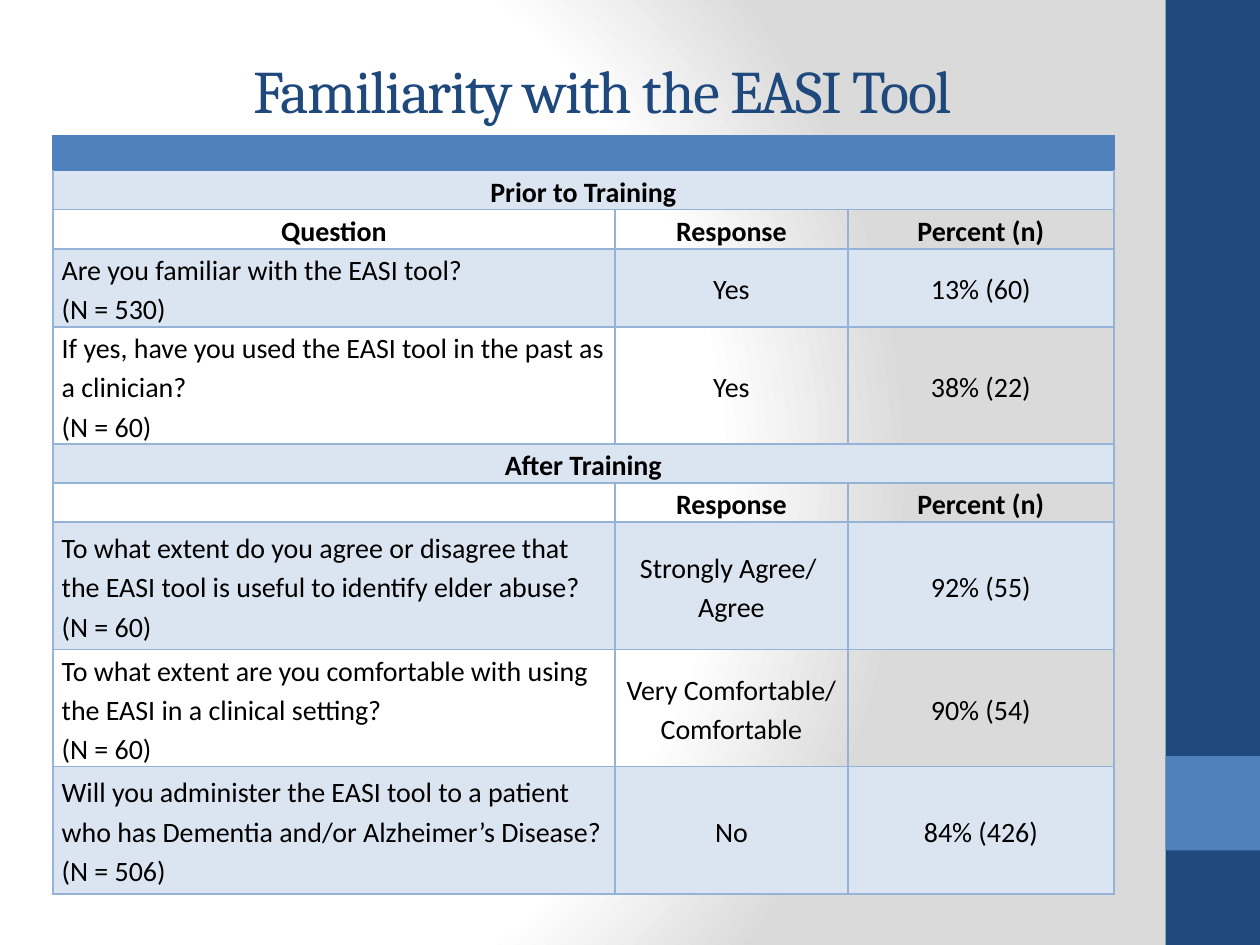
"""Build a slide with a table on familiarity with the EASI tool."""
from pptx import Presentation
from pptx.dml.color import RGBColor
from pptx.enum.shapes import MSO_SHAPE as Shape
from pptx.enum.text import MSO_ANCHOR as Anchor, PP_ALIGN as Align
from pptx.oxml import parse_xml
from pptx.oxml.ns import nsdecls, qn
from pptx.util import Inches, Pt

NAVY = RGBColor(0x1F, 0x49, 0x7D)
BLUE = RGBColor(0x4F, 0x81, 0xBD)
PALE = RGBColor(0xDB, 0xE5, 0xF1)
EDGE = RGBColor(0x95, 0xB3, 0xD7)
BLACK = RGBColor(0, 0, 0)
WHITE = RGBColor(0xFF, 0xFF, 0xFF)
GREY = RGBColor(0xDA, 0xDA, 0xDA)


def grid(*cells):
    """Convert counts of grid cells, 40 across and 30 down, to lengths."""
    return [int(presentation.slide_width * cell / 40) for cell in cells]


def write(frame, text, size=16, font="Calibri", color=BLACK, bold=False,
          align=Align.CENTER, line_spacing=1.15, tracking=0):
    """Write each line of text as a paragraph in the given format."""
    frame.word_wrap = True
    frame.vertical_anchor = Anchor.MIDDLE
    for index, line in enumerate(text.split("\n")):
        paragraph = frame.add_paragraph() if index else frame.paragraphs[0]
        paragraph.alignment = align
        paragraph.line_spacing = line_spacing
        run = paragraph.add_run()
        run.text = line
        run.font.size = Pt(size)
        run.font.name = font
        run.font.bold = bold
        run.font.color.rgb = color
        if tracking:
            run.font._element.set("spc", str(int(tracking * 100)))


presentation = Presentation()
presentation.slide_width, presentation.slide_height = Inches(10), Inches(7.5)
slide = presentation.slides.add_slide(presentation.slide_layouts[6])

slide.background.fill.gradient()
gradient = next(slide.element.iter(qn("a:gradFill")))
stops = "".join(
    f'<a:gs pos="{share * 1000}"><a:srgbClr val="{color}"/></a:gs>'
    for share, color in ((0, WHITE), (75, WHITE), (100, GREY)))
gradient.getparent().replace(gradient, parse_xml(
    f'<a:gradFill {nsdecls("a")} rotWithShape="1"><a:gsLst>{stops}</a:gsLst>'
    '<a:path path="circle"><a:fillToRect l="20000" t="50000" r="100000" b="50000"/>'
    '</a:path></a:gradFill>'))

for top, height, color in ((0, 30, NAVY), (24, 3, BLUE)):
    band = slide.shapes.add_shape(Shape.RECTANGLE, *grid(37, top, 3, height))
    band.shadow.inherit = False
    band.fill.solid()
    band.fill.fore_color.rgb = color
    band.line.fill.background()

title = slide.shapes.add_textbox(*grid(2.48, 0.32, 33.32, 5))
write(title.text_frame, "Familiarity with the EASI Tool", size=34.5,
      font="Cambria", color=NAVY, line_spacing=1, tracking=-0.8)

COLUMNS = (17.84, 7.4, 8.44)
LINE, TALL = 1.24, 4.04
ROWS = [
    (1.1, "header", [""]),
    (LINE, "heading", ["Prior to Training"]),
    (LINE, "heading", ["Question", "Response", "Percent (n)"]),
    (2 * LINE, "body", ["Are you familiar with the EASI tool?\n(N = 530)",
                        "Yes", "13% (60)"]),
    (3 * LINE, "body", ["If yes, have you used the EASI tool in the past as a clinician?"
                        "\n(N = 60)", "Yes", "38% (22)"]),
    (LINE, "heading", ["After Training"]),
    (LINE, "heading", ["", "Response", "Percent (n)"]),
    (TALL, "body", ["To what extent do you agree or disagree that the EASI tool is "
                    "useful to identify elder abuse?\n(N = 60)",
                    "Strongly Agree/ \nAgree", "92% (55)"]),
    (3 * LINE, "body", ["To what extent are you comfortable with using the EASI in a "
                        "clinical setting?\n(N = 60)",
                        "Very Comfortable/\nComfortable", "90% (54)"]),
    (TALL, "body", ["Will you administer the EASI tool to a patient who has Dementia "
                    "and/or Alzheimer’s Disease?\n(N = 506)", "No", "84% (426)"]),
]

table_height = sum(height for height, _, _ in ROWS)
table = slide.shapes.add_table(
    len(ROWS), len(COLUMNS), *grid(1.68, 4.32, sum(COLUMNS), table_height)).table
table.first_row = table.horz_banding = False
for column, width in zip(table.columns, grid(*COLUMNS)):
    column.width = width

for row_index, (height, kind, texts) in enumerate(ROWS):
    row = table.rows[row_index]
    row.height = grid(height)[0]
    for column_index, cell in enumerate(row.cells):
        cell.margin_left = cell.margin_right = Inches(0.07)
        cell.margin_top = cell.margin_bottom = 0
        cell.vertical_anchor = Anchor.MIDDLE
        if kind == "header" or row_index % 2:
            cell.fill.solid()
            cell.fill.fore_color.rgb = BLUE if kind == "header" else PALE
        else:
            cell.fill.background()
        properties = cell._tc.get_or_add_tcPr()
        for position, side in enumerate("LRTB"):
            below_header = row_index == 1 and side == "T"
            color = BLUE if kind == "header" or below_header else EDGE
            properties.insert(position, parse_xml(
                f'<a:ln{side} {nsdecls("a")} w="12700"><a:solidFill>'
                f'<a:srgbClr val="{color}"/></a:solidFill></a:ln{side}>'))
        text = texts[column_index] if column_index < len(texts) else ""
        if text:
            left = kind == "body" and column_index == 0
            write(cell.text_frame, text, bold=kind == "heading",
                  align=Align.LEFT if left else Align.CENTER)
        else:
            cell.text_frame.paragraphs[0]._p.append(
                parse_xml(f'<a:endParaRPr {nsdecls("a")} sz="1200"/>'))
    if len(texts) == 1:
        table.cell(row_index, 0).merge(table.cell(row_index, len(COLUMNS) - 1))

presentation.save("out.pptx")
